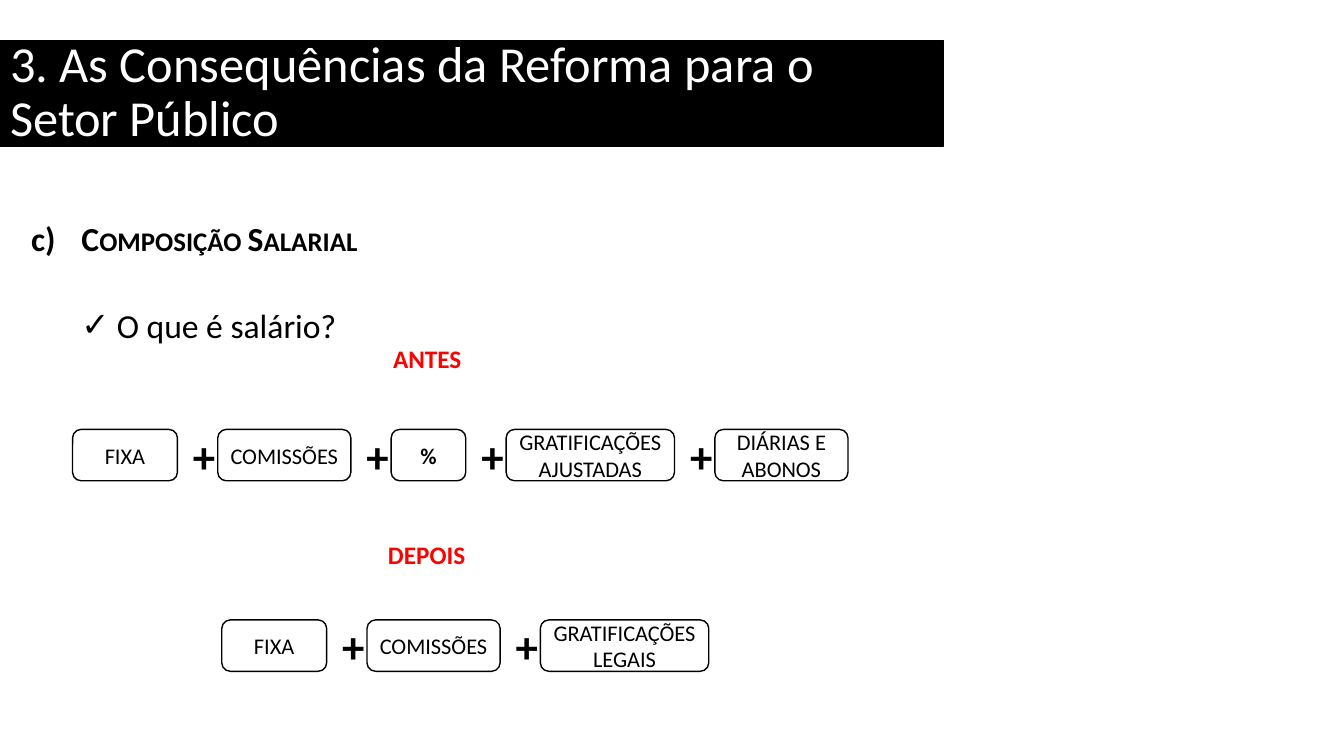
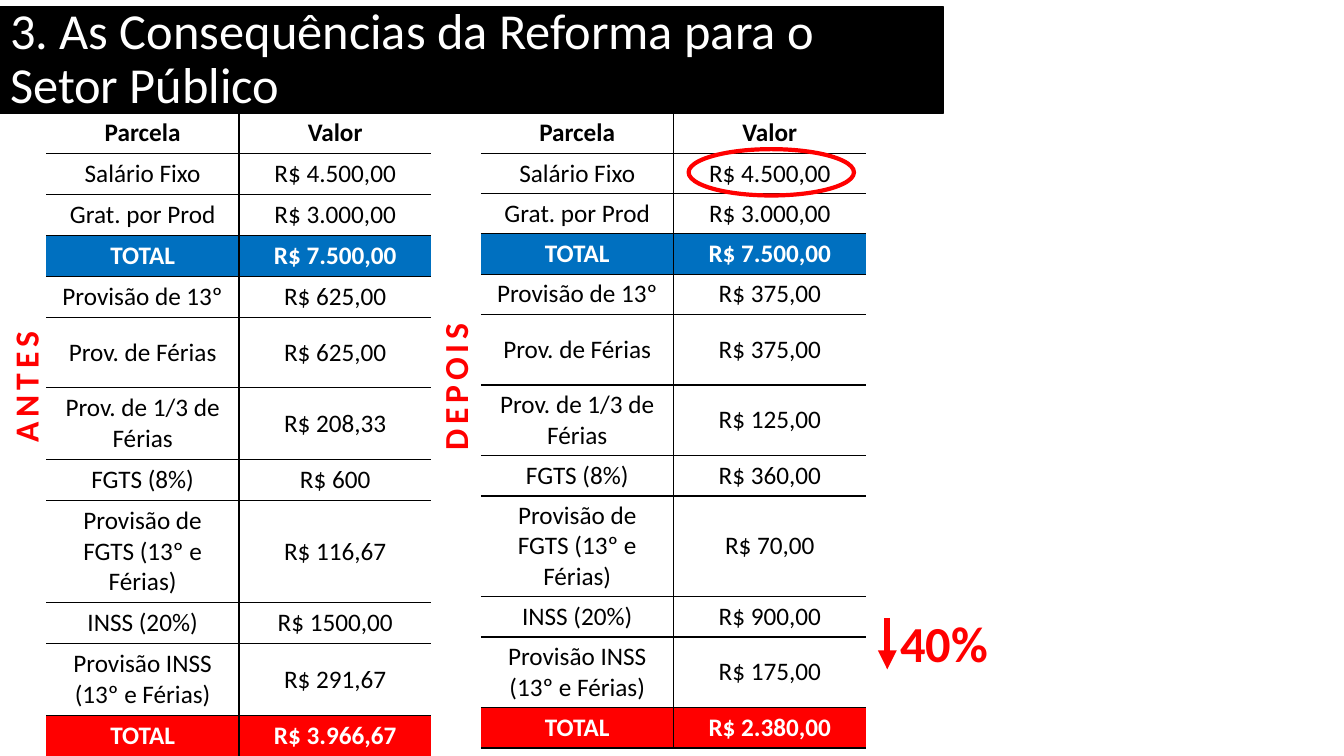
import dataclasses

import lxml.etree
import pptx
import pptx.dml.color
import pptx.enum.shapes
import pptx.enum.text
import pptx.oxml.ns
import pptx.util

Inches = pptx.util.Inches
Pt = pptx.util.Pt
ALIGN = pptx.enum.text.PP_ALIGN
ANCHOR = pptx.enum.text.MSO_ANCHOR
SHAPE = pptx.enum.shapes.MSO_SHAPE

FONT = "Calibri"
BLACK, WHITE, RED, BLUE = "000000", "FFFFFF", "FF0000", "0070C0"
TITLE = "3. As Consequências da Reforma para o Setor Público"
NO_TABLE_STYLE = "{2D5ABB26-0587-4C30-8999-92F81FD0307C}"

CHIP_HEIGHT = 0.51
CHIP_GAP = 0.4
PLUS_WIDTH = 0.32

PARCELS = ["Salário Fixo", "Grat. por Prod", "TOTAL", "Provisão de 13º",
           "Prov. de Férias", "Prov. de 1/3 de Férias", "FGTS (8%)",
           "Provisão de FGTS (13º e Férias)", "INSS (20%)",
           "Provisão INSS (13º e Férias)", "TOTAL"]
ROW_HEIGHTS = [0.4, 0.4, 0.4, 0.4, 0.4, 0.7, 0.7, 0.4, 1, 0.4, 0.7, 0.4]
TOTAL_FILLS = {3: BLUE, 11: RED}


@dataclasses.dataclass
class Chip:
    label: str
    width: float
    bold: bool = False


@dataclasses.dataclass
class Composition:
    """One salary sum: its heading and the chips joined by plus signs."""
    heading: str
    heading_left: float
    heading_top: float
    left: float
    top: float
    chips: list[Chip]


@dataclasses.dataclass
class CostTable:
    period: str
    period_left: float
    left: float
    cell_margin: float
    amounts: list[str]


FIXED = Chip("FIXA", 1.04)
COMMISSIONS = Chip("COMISSÕES", 1.32)

COMPOSITIONS = [
    Composition("ANTES", 3.8, 3.36, 0.72, 4.26, [
        FIXED, COMMISSIONS, Chip("%", 0.74, True),
        Chip("GRATIFICAÇÕES AJUSTADAS", 1.67), Chip("DIÁRIAS E ABONOS", 1.32)]),
    Composition("DEPOIS", 3.75, 5.3, 2.2, 6.15, [
        FIXED, COMMISSIONS, Chip("GRATIFICAÇÕES LEGAIS", 1.67)]),
]

COST_TABLES = [
    CostTable("ANTES", 0, 0.46, 0.05, [
        "R$ 4.500,00", "R$ 3.000,00", "R$ 7.500,00", "R$ 625,00", "R$ 625,00",
        "R$ 208,33", "R$ 600", "R$ 116,67", "R$ 1500,00", "R$ 291,67",
        "R$ 3.966,67"]),
    CostTable("DEPOIS", 4.26, 4.77, 0.04, [
        "R$ 4.500,00", "R$ 3.000,00", "R$ 7.500,00", "R$ 375,00", "R$ 375,00",
        "R$ 125,00", "R$ 360,00", "R$ 70,00", "R$ 900,00", "R$ 175,00",
        "R$ 2.380,00"]),
]


def rgb(color: str) -> pptx.dml.color.RGBColor:
    return pptx.dml.color.RGBColor.from_string(color)


def add_xml(parent, tag: str, **attributes: str):
    child = lxml.etree.SubElement(parent, pptx.oxml.ns.qn(tag))
    for name, value in attributes.items():
        child.set(name, value)
    return child


def format_paragraph(paragraph, size: float, color: str = BLACK,
                     bold: bool = False, align=ALIGN.LEFT) -> None:
    paragraph.alignment = align
    for run in paragraph.runs:
        run.font.name = FONT
        run.font.size = Pt(size)
        run.font.bold = bold
        run.font.color.rgb = rgb(color)


def add_title_slide(deck, title_top: float):
    slide = deck.slides.add_slide(deck.slide_layouts[5])
    title = slide.shapes.title
    title.left, title.top = Inches(0), Inches(title_top)
    title.width, title.height = Inches(9.36), Inches(1.05)
    title.fill.solid()
    title.fill.fore_color.rgb = rgb(BLACK)
    title.line.color.rgb = rgb(BLACK)
    title.line.width = Pt(1)
    frame = title.text_frame
    frame.text = TITLE
    frame.word_wrap = True
    frame.auto_size = pptx.enum.text.MSO_AUTO_SIZE.NONE
    frame.vertical_anchor = ANCHOR.MIDDLE
    frame.paragraphs[0].line_spacing = 0.9
    format_paragraph(frame.paragraphs[0], 36, WHITE)
    return slide


def add_label(slide, text: str, left: float, top: float, width: float,
              height: float, size: float):
    """Add a bold red text box and return its frame."""
    box = slide.shapes.add_textbox(Inches(left), Inches(top),
                                   Inches(width), Inches(height))
    frame = box.text_frame
    frame.word_wrap = True
    frame.text = text
    format_paragraph(frame.paragraphs[0], size, RED, True)
    return frame


def add_period(slide, table: CostTable) -> None:
    """Write the period upwards beside its table, widely spaced."""
    frame = add_label(slide, table.period, table.period_left, 2.92, 0.61, 1.84, 24)
    frame._txBody.bodyPr.set("vert", "vert270")
    paragraph = frame.paragraphs[0]
    paragraph.alignment = ALIGN.CENTER
    paragraph.runs[0].font._element.set("spc", "350")


def indent(paragraph, left: float, hanging: float):
    """Set a hanging indent and return the properties for a bullet."""
    properties = paragraph._p.get_or_add_pPr()
    properties.set("marL", str(Inches(left)))
    properties.set("indent", str(-Inches(hanging)))
    return properties


def add_question(slide) -> None:
    box = slide.shapes.add_textbox(Inches(0.21), Inches(2.16),
                                   Inches(9.42), Inches(1.3))
    frame = box.text_frame
    frame.word_wrap = True
    topic = frame.paragraphs[0]
    topic.text = "Composição Salarial"
    topic.line_spacing = 0.9
    add_xml(indent(topic, 0.5, 0.5), "a:buAutoNum",
            type="alphaLcParenR", startAt="3")
    format_paragraph(topic, 24, bold=True)
    topic.runs[0].font._element.set("cap", "small")

    question = frame.add_paragraph()
    question.text = "O que é salário?"
    question.line_spacing = 0.9
    question.space_before = Pt(36)
    question_properties = indent(question, 0.85, 0.35)
    add_xml(question_properties, "a:buFont", typeface=FONT)
    add_xml(question_properties, "a:buChar", char="✓")
    format_paragraph(question, 24)


def add_box(group, text: str, left: float, top: float, width: float,
            size: float, bold: bool, outlined: bool) -> None:
    box = group.shapes.add_shape(SHAPE.ROUNDED_RECTANGLE, Inches(left), Inches(top),
                                 Inches(width), Inches(CHIP_HEIGHT))
    box.shadow.inherit = False
    box.fill.solid()
    box.fill.fore_color.rgb = rgb(WHITE)
    if outlined:
        box.line.color.rgb = rgb(BLACK)
        box.line.width = Pt(1)
    else:
        box.line.fill.background()
    box.text_frame.word_wrap = True
    box.text_frame.vertical_anchor = ANCHOR.MIDDLE
    box.text_frame.text = text
    format_paragraph(box.text_frame.paragraphs[0], size, bold=bold, align=ALIGN.CENTER)


def add_composition(slide, composition: Composition) -> None:
    add_label(slide, composition.heading, composition.heading_left,
              composition.heading_top, 1.2, 0.4, 18)
    group = slide.shapes.add_group_shape()
    left = composition.left
    for position, chip in enumerate(composition.chips):
        if position:
            plus_left = left - (CHIP_GAP + PLUS_WIDTH) / 2
            add_box(group, "+", plus_left, composition.top, PLUS_WIDTH, 32, True, False)
        add_box(group, chip.label, left, composition.top, chip.width,
                16, chip.bold, True)
        left += chip.width + CHIP_GAP


def add_borders(cell, sides: list[str]) -> None:
    properties = cell._tc.get_or_add_tcPr()
    for side in sides:
        line = add_xml(properties, f"a:ln{side}", w=str(Pt(1)))
        add_xml(add_xml(line, "a:solidFill"), "a:srgbClr", val=BLACK)


def add_cost_table(slide, costs: CostTable) -> None:
    rows = [("Parcela", "Valor"), *zip(PARCELS, costs.amounts)]
    frame = slide.shapes.add_table(len(rows), 2, Inches(costs.left), Inches(1.12),
                                   Inches(3.82), Inches(sum(ROW_HEIGHTS)))
    table = frame.table
    table._tbl.tblPr.find(pptx.oxml.ns.qn("a:tableStyleId")).text = NO_TABLE_STYLE
    for column in table.columns:
        column.width = Inches(1.91)
    for row_index, texts in enumerate(rows):
        table.rows[row_index].height = Inches(ROW_HEIGHTS[row_index])
        total_fill = TOTAL_FILLS.get(row_index)
        for column_index, text in enumerate(texts):
            cell = table.cell(row_index, column_index)
            sides = ["L" if column_index else "R"]
            sides += ["T", "B"] if row_index else ["B"]
            add_borders(cell, sides)
            if total_fill:
                cell.fill.solid()
                cell.fill.fore_color.rgb = rgb(total_fill)
            else:
                cell.fill.background()
            cell.margin_top = cell.margin_bottom = Inches(costs.cell_margin)
            cell.vertical_anchor = ANCHOR.MIDDLE
            cell.text_frame.text = text
            format_paragraph(cell.text_frame.paragraphs[0], 18,
                             WHITE if total_fill else BLACK,
                             bool(total_fill) or row_index == 0, ALIGN.CENTER)


def add_reduction(slide) -> None:
    """Show the fall in cost: a down arrow beside its percentage."""
    add_label(slide, "40%", 8.83, 6.02, 1.07, 0.71, 36)
    arrow = slide.shapes.add_connector(
        pptx.enum.shapes.MSO_CONNECTOR.STRAIGHT,
        Inches(8.8), Inches(6.13), Inches(8.8), Inches(6.64))
    arrow.line.color.rgb = rgb(RED)
    arrow.line.width = Pt(4.5)
    add_xml(arrow.line._get_or_add_ln(), "a:tailEnd", type="triangle")
    add_xml(arrow._element.spPr, "a:effectLst")


def add_salary_highlight(slide) -> None:
    ring = slide.shapes.add_shape(SHAPE.OVAL, Inches(6.83), Inches(1.48),
                                  Inches(1.64), Inches(0.46))
    ring.shadow.inherit = False
    ring.fill.background()
    ring.line.color.rgb = rgb(RED)
    ring.line.width = Pt(3)


def main() -> None:
    deck = pptx.Presentation()
    deck.slide_width, deck.slide_height = Inches(13.33), Inches(7.5)

    salary_slide = add_title_slide(deck, 0.4)
    add_question(salary_slide)
    for composition in COMPOSITIONS:
        add_composition(salary_slide, composition)

    cost_slide = add_title_slide(deck, 0.07)
    for costs in COST_TABLES:
        add_cost_table(cost_slide, costs)
        add_period(cost_slide, costs)
    add_reduction(cost_slide)
    add_salary_highlight(cost_slide)

    deck.save("out.pptx")


if __name__ == "__main__":
    main()
